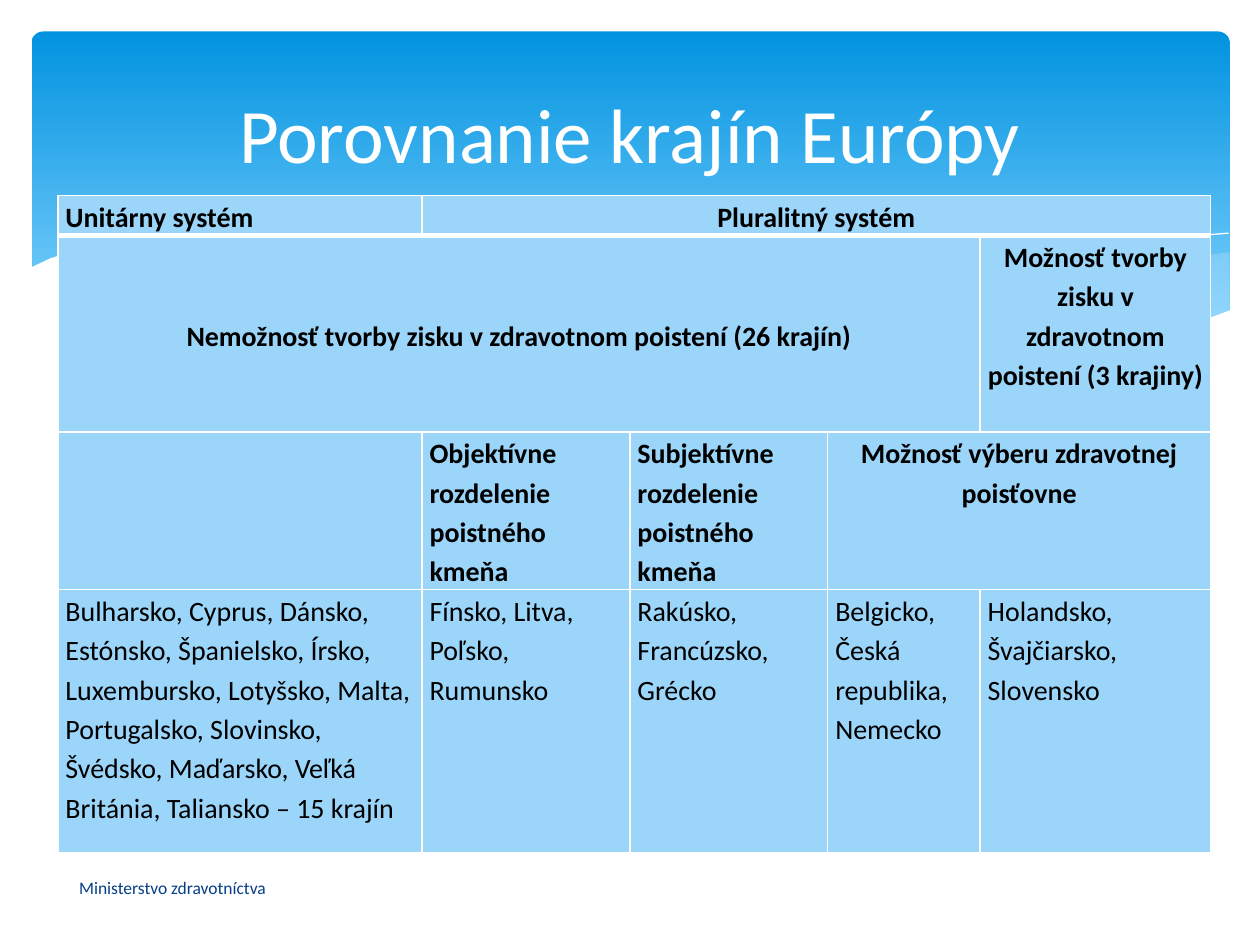
from dataclasses import dataclass

from lxml.etree import SubElement
from pptx import Presentation
from pptx.dml.color import RGBColor
from pptx.enum.shapes import MSO_SHAPE as Preset
from pptx.enum.text import MSO_ANCHOR as Anchor, PP_ALIGN as Align
from pptx.oxml import parse_xml
from pptx.oxml.ns import nsdecls, qn
from pptx.util import Emu, Inches, Pt

COLUMNS, ROWS = 1000, 750  # layout grid laid over the whole slide


@dataclass(frozen=True)
class Theme:
    font: str = "Calibri"
    title_size: int = 44
    cell_size: int = 16
    footer_size: int = 10
    white: str = "FFFFFF"
    black: str = "000000"
    footer: str = "073E87"
    cell: str = "9BD5FA"
    wave: str = "C6E7FC"
    sky_top: str = "0293E0"
    sky_bottom: str = "83D3FE"


@dataclass(frozen=True)
class Wave:
    """Outline in grid units; alpha is the fill's opacity in percent."""
    points: tuple[tuple[int, int], ...]
    fill: str | None = None
    alpha: int = 100


@dataclass(frozen=True)
class Entry:
    row: int
    col: int
    text: str
    span: int = 1
    align: Align = Align.LEFT
    anchor: Anchor = Anchor.TOP


THEME = Theme()

WAVES = (
    Wave(((976, 200), (948, 204), (921, 210), (891, 216), (861, 223), (805, 237),
          (753, 248), (706, 257), (661, 265), (691, 269), (719, 272), (745, 275),
          (781, 277), (814, 278), (854, 276), (889, 272), (921, 265), (949, 257),
          (976, 247)), THEME.wave, 29),
    Wave(((893, 273), (837, 265), (775, 254), (706, 240), (629, 222), (584, 211),
          (541, 203), (502, 196), (465, 191), (420, 187), (380, 185), (344, 186),
          (313, 188), (286, 191), (323, 196), (362, 203), (404, 211), (449, 222),
          (530, 240), (601, 255), (665, 266), (722, 274), (773, 277), (818, 278),
          (857, 277)), THEME.wave, 40),
    Wave(((309, 195), (328, 192), (353, 189), (387, 187), (433, 187), (469, 189),
          (510, 192), (556, 197), (608, 204), (665, 213), (727, 226), (795, 241),
          (869, 261), (907, 272))),
    Wave(((613, 257), (653, 246), (695, 235), (748, 223), (806, 210), (866, 199),
          (910, 192), (951, 187), (975, 185))),
    Wave(((977, 246), (950, 256), (920, 265), (887, 271), (850, 275), (809, 277),
          (761, 275), (708, 270), (648, 262), (579, 250), (503, 233), (447, 220),
          (391, 207), (340, 197), (292, 190), (250, 186), (211, 184), (161, 184),
          (119, 187), (85, 193), (59, 199), (40, 205), (23, 213), (23, 329),
          (977, 329)), THEME.white),
)

TABLE_BOX = (46, 155, 915, 522)
TABLE_COLS = (289, 165, 157, 121, 183)
TABLE_ROWS = (32, 156, 125, 209)
HEADING_ROWS = 3

ENTRIES = (
    Entry(0, 0, "Unitárny systém"),
    Entry(0, 1, "Pluralitný systém", 4, Align.CENTER),
    Entry(1, 0, "Nemožnosť tvorby zisku v zdravotnom poistení (26 krajín)", 4,
          Align.CENTER, Anchor.MIDDLE),
    Entry(1, 4, "Možnosť tvorby zisku v zdravotnom poistení (3 krajiny)",
          align=Align.CENTER),
    Entry(2, 1, "Objektívne rozdelenie poistného kmeňa"),
    Entry(2, 2, "Subjektívne rozdelenie poistného kmeňa"),
    Entry(2, 3, "Možnosť výberu zdravotnej poisťovne", 2, Align.CENTER),
    Entry(3, 0, "Bulharsko, Cyprus, Dánsko, Estónsko, Španielsko, Írsko, "
                "Luxembursko, Lotyšsko, Malta, Portugalsko, Slovinsko, Švédsko, "
                "Maďarsko, Veľká Británia, Taliansko – 15 krajín"),
    Entry(3, 1, "Fínsko, Litva, Poľsko, Rumunsko"),
    Entry(3, 2, "Rakúsko, Francúzsko, Grécko"),
    Entry(3, 3, "Belgicko, Česká republika, Nemecko"),
    Entry(3, 4, "Holandsko, Švajčiarsko, Slovensko"),
)

prs = Presentation()
prs.slide_width, prs.slide_height = Inches(10), Inches(7.5)


def across(units: int) -> Emu:
    return Emu(round(prs.slide_width * units / COLUMNS))


def down(units: int) -> Emu:
    return Emu(round(prs.slide_height * units / ROWS))


def box(left: int, top: int, width: int, height: int) -> tuple[Emu, ...]:
    return across(left), down(top), across(width), down(height)


def write(frame, text: str, size: int, color: str, bold: bool = False,
          align: Align = Align.LEFT):
    paragraph = frame.paragraphs[0]
    paragraph.alignment = align
    run = paragraph.add_run()
    run.text = text
    run.font.name, run.font.size, run.font.bold = THEME.font, Pt(size), bold
    run.font.color.rgb = RGBColor.from_string(color)
    return paragraph


def draw_sky(shapes) -> None:
    sky = shapes.add_shape(Preset.ROUNDED_RECTANGLE, *box(25, 25, 951, 270))
    sky.adjustments[0] = 0.034
    sky.shadow.inherit = False
    sky.line.fill.background()
    sky.fill.gradient()
    sky.fill.gradient_angle = 270
    stops = ((0, THEME.sky_top), (0.9, THEME.sky_bottom))
    for stop, (position, color) in zip(sky.fill.gradient_stops, stops):
        stop.position = position
        stop.color.rgb = RGBColor.from_string(color)


def draw_wave(shapes, wave: Wave) -> None:
    start, *rest = [(across(x), down(y)) for x, y in wave.points]
    builder = shapes.build_freeform(*start)
    builder.add_line_segments(rest, close=wave.fill is not None)
    outline = builder.convert_to_shape()
    outline.shadow.inherit = False
    if wave.fill is None:
        outline.fill.background()
        outline.line.color.rgb = RGBColor.from_string(THEME.white)
        outline.line.width = Pt(0)
        return
    outline.line.fill.background()
    outline.fill.solid()
    outline.fill.fore_color.rgb = RGBColor.from_string(wave.fill)
    if wave.alpha < 100:
        color = outline.element.spPr.find(qn("a:solidFill"))[0]
        SubElement(color, qn("a:alpha"), val=str(wave.alpha * 1000))


def style_cell(cell, row: int) -> None:
    cell.fill.solid()
    cell.fill.fore_color.rgb = RGBColor.from_string(THEME.cell)
    cell.margin_left = cell.margin_right = across(6)
    cell.margin_top = cell.margin_bottom = 0
    widths = {"L": 1, "R": 1, "T": 3 if row == 1 else 1, "B": 3 if row == 0 else 1}
    properties = cell._tc.get_or_add_tcPr()
    for index, (side, width) in enumerate(widths.items()):
        properties.insert(index, parse_xml(
            f'<a:ln{side} {nsdecls("a")} w="{Pt(width)}"><a:solidFill>'
            f'<a:srgbClr val="{THEME.white}"/></a:solidFill></a:ln{side}>'))


def draw_comparison(shapes) -> None:
    table = shapes.add_table(len(TABLE_ROWS), len(TABLE_COLS), *box(*TABLE_BOX)).table
    table.first_row = table.horz_banding = False
    for column, width in zip(table.columns, TABLE_COLS):
        column.width = across(width)
    for index, (row, height) in enumerate(zip(table.rows, TABLE_ROWS)):
        row.height = down(height)
        for cell in row.cells:
            style_cell(cell, index)
    for entry in ENTRIES:
        cell = table.cell(entry.row, entry.col)
        if entry.span > 1:
            cell.merge(table.cell(entry.row, entry.col + entry.span - 1))
        cell.vertical_anchor = entry.anchor
        write(cell.text_frame, entry.text, THEME.cell_size, THEME.black,
              entry.row < HEADING_ROWS, entry.align).line_spacing = 1.15


def main() -> None:
    slide = prs.slides.add_slide(prs.slide_layouts[5])
    shapes = slide.shapes
    draw_sky(shapes)
    for wave in WAVES:
        draw_wave(shapes, wave)

    title = shapes.title
    title.left, title.top, title.width, title.height = box(50, 37, 900, 137)
    title.text_frame.vertical_anchor = Anchor.MIDDLE
    write(title.text_frame, "Porovnanie krajín Európy", THEME.title_size, THEME.white,
          align=Align.CENTER)
    shapes.element.append(title.element)  # bring in front of the waves

    ministry = shapes.add_textbox(*box(53, 684, 382, 40)).text_frame
    ministry.word_wrap = True
    ministry.vertical_anchor = Anchor.MIDDLE
    write(ministry, "Ministerstvo zdravotníctva", THEME.footer_size, THEME.footer)

    draw_comparison(shapes)
    prs.save("out.pptx")


if __name__ == "__main__":
    main()
